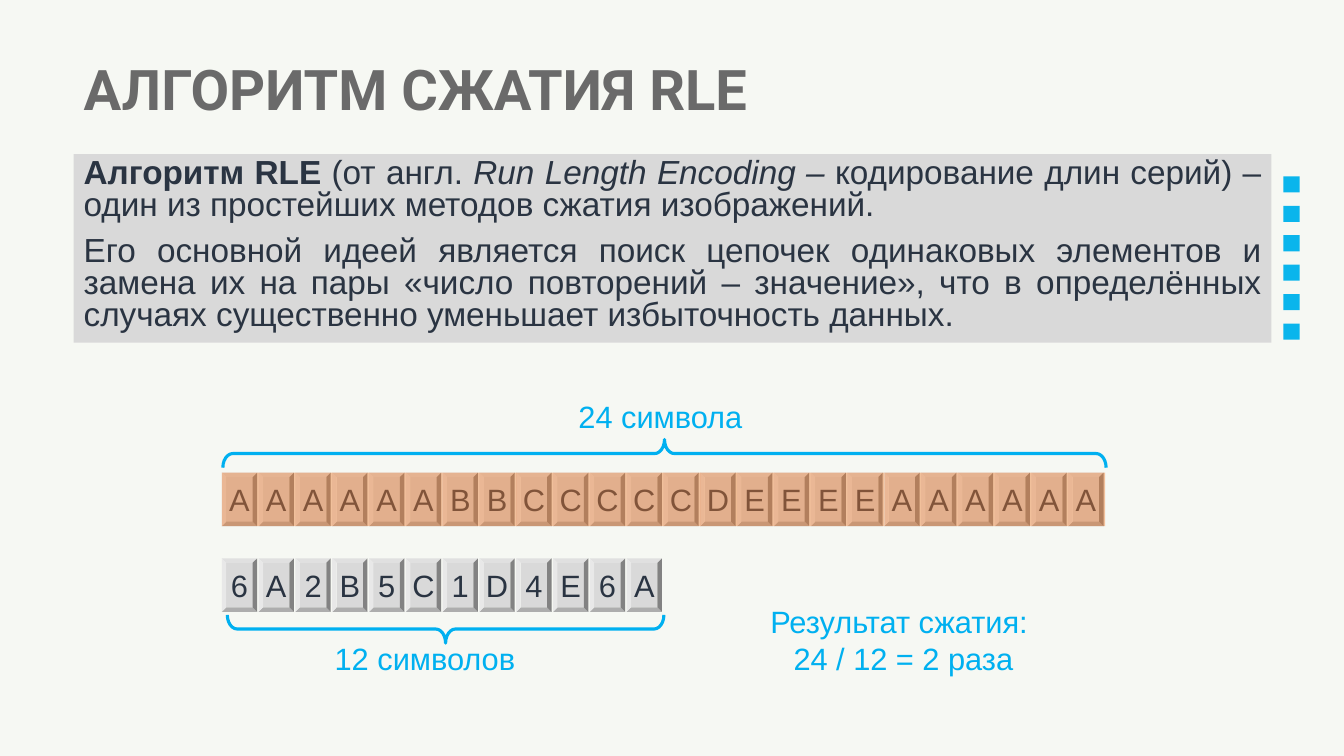
"""Build a slide explaining the RLE compression algorithm."""
from dataclasses import dataclass
from itertools import groupby

from lxml import etree
from pptx import Presentation
from pptx.dml.color import RGBColor
from pptx.enum import shapes, text as text_enum
from pptx.oxml import ns
from pptx.util import Inches, Pt

TITLE = "АЛГОРИТМ СЖАТИЯ RLE"
DEFINITION = [
    [
        ("Алгоритм RLE ", "bold"),
        ("(от англ. ", ""),
        ("Run Length Encoding – ", "italic"),
        ("кодирование длин серий) – один из простейших методов сжатия изображений.", ""),
    ],
    [
        ("Его основной идеей является поиск цепочек одинаковых элементов и замена их на пары "
         "«число повторений – значение», что в определённых случаях существенно уменьшает "
         "избыточность данных.", ""),
    ],
]
SOURCE = "AAAAAABBCCCCCDEEEEAAAAAA"
CAPTIONS = [
    ("24 символа", (5.57, 3.97, 1.96, 0.39)),
    ("12 символов", (2.96, 6.37, 2.51, 0.39)),
    ("Результат сжатия: \n24 / 12 = 2 раза", (6.94, 5.93, 4.04, 0.83)),
]
BRACES = [
    ((6.59, 4.5), 8.76, 90),
    ((4.42, 6.24), 4.33, 270),
]
TITLE_BOX = (0.73, 0.45, 11.88, 0.93)
DEFINITION_BOX = (0.73, 1.53, 11.88, 1.87)
ROW_LEFT, SOURCE_TOP, ENCODED_TOP = 2.2, 4.69, 5.54
CELL_WIDTH, CELL_HEIGHT, CELL_PITCH = 0.35, 0.53, 0.365
BRACE_DEPTH = 0.28
MARK_LEFT, MARK_TOP, MARK_SIZE, MARK_PITCH, MARK_COUNT = 12.73, 1.75, 0.16, 0.292, 6


@dataclass(frozen=True)
class Theme:
    """Colours, fonts and type sizes of the slide."""
    background: str = "F6F8F3"
    title: str = "6A6A6A"
    ink: str = "2A3442"
    panel: str = "D9D9D9"
    mark: str = "0AB5EC"
    accent: str = "00B0F0"
    highlight: str = "ED7D31"
    highlight_alpha: int = 45
    title_font: str = "Roboto"
    body_font: str = "Arial"
    title_size: float = 40
    body_size: float = 23.8
    label_size: float = 22
    brace_line: float = 2.25


THEME = Theme()
ALIGN = text_enum.PP_ALIGN
ANCHOR = text_enum.MSO_ANCHOR


def place(shape, box):
    """Move a shape to a box given in inches."""
    shape.left, shape.top, shape.width, shape.height = map(Inches, box)


def paint(shape, color, alpha=None):
    """Fill a shape with a colour and an optional opacity in percent."""
    shape.fill.solid()
    shape.fill.fore_color.rgb = RGBColor.from_string(color)
    if alpha is not None:
        color_node = shape.fill._xPr.find(".//" + ns.qn("a:srgbClr"))
        etree.SubElement(color_node, ns.qn("a:alpha"), val=str(alpha * 1000))


def add_shape(slide, kind, box, fill=None, alpha=None):
    """Add a preset shape without outline or shadow."""
    shape = slide.shapes.add_shape(kind, *map(Inches, box))
    shape.shadow.inherit = False
    shape.line.fill.background()
    if fill:
        paint(shape, fill, alpha)
    else:
        shape.fill.background()
    return shape


def write(shape, content, size=THEME.label_size, color=THEME.ink, font=THEME.body_font,
          bold=False, align=ALIGN.CENTER, anchor=ANCHOR.MIDDLE, insets=(0, 0),
          line_spacing=None, space_before=None):
    """Write a string, or paragraphs of styled runs, into a shape."""
    frame = shape.text_frame
    frame.word_wrap = True
    frame.auto_size = text_enum.MSO_AUTO_SIZE.NONE
    frame.vertical_anchor = anchor
    frame.margin_left = frame.margin_right = Inches(insets[0])
    frame.margin_top = frame.margin_bottom = Inches(insets[1])
    paragraphs = [[(content, "")]] if isinstance(content, str) else content
    for index, runs in enumerate(paragraphs):
        paragraph = frame.add_paragraph() if index else frame.paragraphs[0]
        paragraph.alignment = align
        paragraph.line_spacing = line_spacing
        if space_before is not None:
            paragraph.space_before = Pt(space_before)
        for run_text, style in runs:
            for number, line in enumerate(run_text.split("\n")):
                if number:
                    paragraph.add_line_break()
                run = paragraph.add_run()
                run.text = line
                run.font.name = font
                run.font.size = Pt(size)
                run.font.color.rgb = RGBColor.from_string(color)
                run.font.bold = bold or style == "bold"
                run.font.italic = style == "italic"


def remove_bullets(shape):
    """Turn off bullets and hanging indents."""
    for paragraph in shape.text_frame.paragraphs:
        properties = paragraph._p.get_or_add_pPr()
        properties.set("marL", "0")
        properties.set("indent", "0")
        etree.SubElement(properties, ns.qn("a:buNone"))


def add_cells(slide, symbols, top):
    """Draw one bevelled cell for each symbol."""
    for index, symbol in enumerate(symbols):
        box = (ROW_LEFT + index * CELL_PITCH, top, CELL_WIDTH, CELL_HEIGHT)
        cell = add_shape(slide, shapes.MSO_SHAPE.BEVEL, box, THEME.panel)
        write(cell, symbol)


def add_brace(slide, center, length, rotation):
    """Draw a horizontal brace around a centre point."""
    box = (center[0] - BRACE_DEPTH / 2, center[1] - length / 2, BRACE_DEPTH, length)
    brace = add_shape(slide, shapes.MSO_SHAPE.LEFT_BRACE, box)
    brace.adjustments[0] = 0.35
    brace.rotation = rotation
    brace.line.color.rgb = RGBColor.from_string(THEME.accent)
    brace.line.width = Pt(THEME.brace_line)


def main():
    """Build and save the presentation."""
    presentation = Presentation()
    presentation.slide_width, presentation.slide_height = Inches(13.33), Inches(7.5)
    slide = presentation.slides.add_slide(presentation.slide_layouts[1])
    paint(slide.background, THEME.background)

    title, definition = slide.placeholders
    place(title, TITLE_BOX)
    write(title, TITLE, size=THEME.title_size, color=THEME.title, font=THEME.title_font,
          bold=True, align=ALIGN.LEFT, insets=(0.1, 0.05), line_spacing=0.9)
    place(definition, DEFINITION_BOX)
    paint(definition, THEME.panel)
    write(definition, DEFINITION, size=THEME.body_size, align=ALIGN.JUSTIFY,
          anchor=ANCHOR.TOP, insets=(0.1, 0.05), line_spacing=0.8, space_before=10)
    remove_bullets(definition)

    for index in range(MARK_COUNT):
        box = (MARK_LEFT, MARK_TOP + index * MARK_PITCH, MARK_SIZE, MARK_SIZE)
        add_shape(slide, shapes.MSO_SHAPE.RECTANGLE, box, THEME.mark)

    for center, length, rotation in BRACES:
        add_brace(slide, center, length, rotation)
    for caption, box in CAPTIONS:
        write(slide.shapes.add_textbox(*map(Inches, box)), caption, color=THEME.accent,
              anchor=ANCHOR.BOTTOM, insets=(0, 0.05))

    series = [(symbol, len(list(group))) for symbol, group in groupby(SOURCE)]
    add_cells(slide, SOURCE, SOURCE_TOP)
    add_cells(slide, "".join(f"{count}{symbol}" for symbol, count in series), ENCODED_TOP)
    left = ROW_LEFT
    for _, count in series:
        width = count * CELL_PITCH
        add_shape(slide, shapes.MSO_SHAPE.RECTANGLE, (left, SOURCE_TOP, width, CELL_HEIGHT),
                  THEME.highlight, THEME.highlight_alpha)
        left += width

    presentation.save("out.pptx")


if __name__ == "__main__":
    main()
